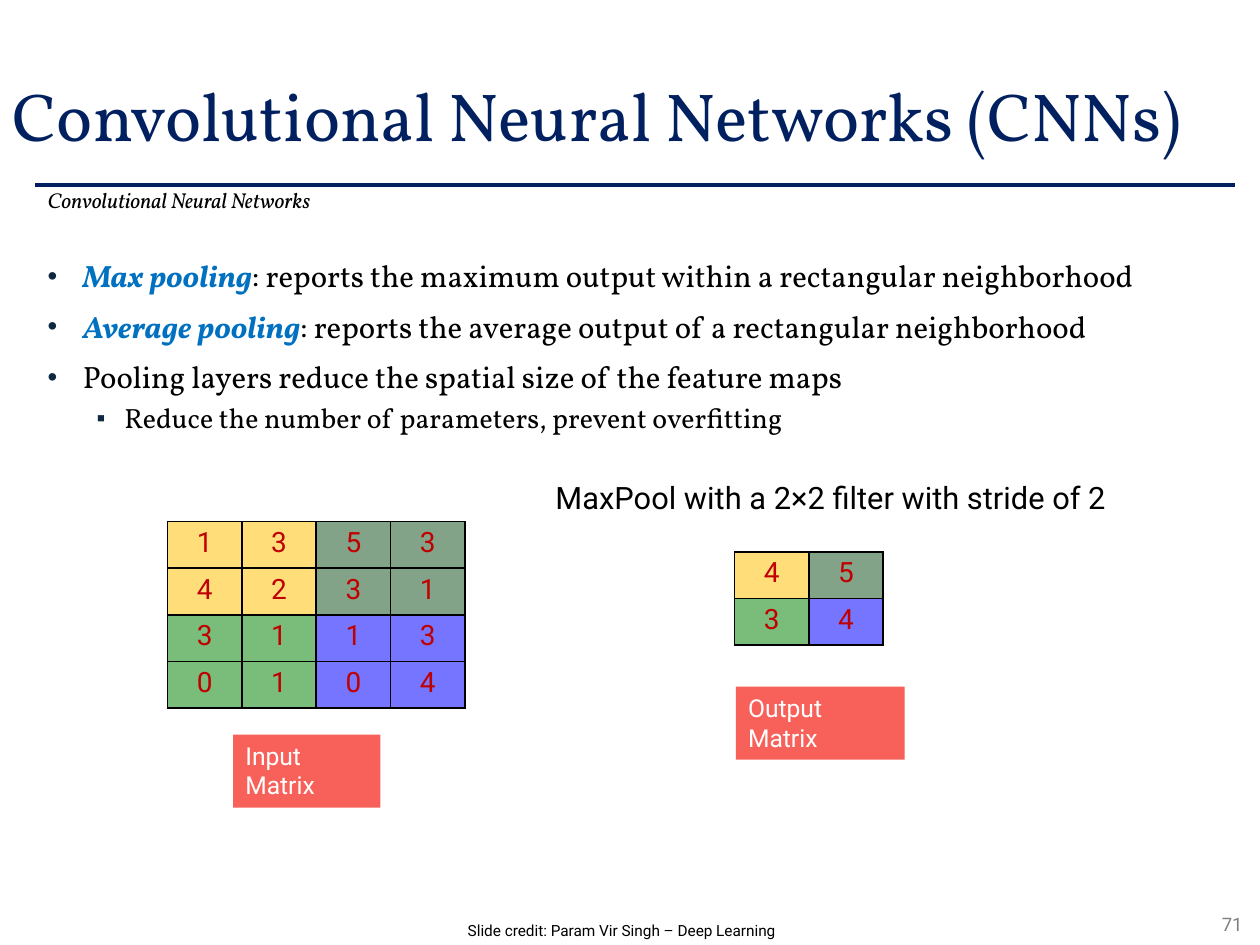
import pptx
import pptx.util
import pptx.dml.color
import pptx.enum.shapes
import pptx.enum.text
import pptx.oxml
import pptx.oxml.ns
from lxml import etree

Inches, Pt = pptx.util.Inches, pptx.util.Pt
RGB = pptx.dml.color.RGBColor.from_string
ALIGN = pptx.enum.text.PP_ALIGN
ANCHOR = pptx.enum.text.MSO_ANCHOR
qn = pptx.oxml.ns.qn

COLORS = {
    "navy": "002060", "black": "000000", "white": "FFFFFF", "gray": "808080",
    "blue": "0070C0", "bullet": "0E2841", "red": "C00000", "coral": "F7615A",
}
# Pooling regions: fill colour and opacity in percent
REGIONS = {"A": ("FFC000", 52), "B": ("13501B", 52), "C": ("008000", 52), "D": ("0000FF", 54)}


def add_run(p, text, size, font, color, bold=False, italic=False):
    r = p.add_run()
    r.text = text
    r.font.size, r.font.name = Pt(size), font
    r.font.bold, r.font.italic = bold, italic
    r.font.color.rgb = RGB(COLORS[color])


def add_matrix(left, top, values, regions):
    """Add a table of numbers whose cells are tinted by pooling region."""
    rows, cols = len(values), len(values[0])
    frame = s.shapes.add_table(rows, cols, Inches(left), Inches(top),
                               Inches(0.59 * cols), Inches(0.37 * rows))
    table = frame.table
    table.first_row = table.horz_banding = False
    for col in table.columns:
        col.width = Inches(0.59)
    for i, row in enumerate(table.rows):
        row.height = Inches(0.37)
        for j, cell in enumerate(row.cells):
            cell.margin_left = cell.margin_right = Inches(0.09)
            cell.margin_top = cell.margin_bottom = Inches(0.04)
            p = cell.text_frame.paragraphs[0]
            p.alignment = ALIGN.CENTER
            add_run(p, values[i][j], 16, "Roboto", "red")
            color, opacity = REGIONS[regions[i][j]]
            cell.fill.solid()
            cell.fill.fore_color.rgb = RGB(color)
            tcPr = cell._tc.get_or_add_tcPr()
            srgb = tcPr.find(".//" + qn("a:srgbClr"))
            etree.SubElement(srgb, qn("a:alpha"), val=str(opacity * 1000))
            for k, side in enumerate(("lnL", "lnR", "lnT", "lnB")):
                ln = etree.Element(qn("a:" + side), w=str(Pt(1)))
                fill = etree.SubElement(ln, qn("a:solidFill"))
                etree.SubElement(fill, qn("a:srgbClr"), val=COLORS["black"])
                tcPr.insert(k, ln)


prs = pptx.Presentation()
prs.slide_width, prs.slide_height = Inches(10), Inches(7.5)
s = prs.slides.add_slide(prs.slide_layouts[5])

# Title and rule
title = s.shapes.title
title.left, title.top, title.width, title.height = Inches(0), Inches(0.44), Inches(10), Inches(1.01)
tf = title.text_frame
tf.auto_size = pptx.enum.text.MSO_AUTO_SIZE.NONE
tf.vertical_anchor = ANCHOR.MIDDLE
p = tf.paragraphs[0]
p.alignment, p.line_spacing = ALIGN.LEFT, 0.9
add_run(p, "Convolutional Neural Networks (CNNs)", 38.8, "Vollkorn", "navy")

rule = s.shapes.add_connector(pptx.enum.shapes.MSO_CONNECTOR.STRAIGHT,
                              Inches(0.28), Inches(1.47), Inches(9.8), Inches(1.47))
rule.line.color.rgb = RGB(COLORS["navy"])
rule.line.width = Pt(2)
etree.SubElement(rule._element.spPr, qn("a:effectLst"))

# Single-line texts: left, top, width, height, text, size, font, colour, italic, alignment
LINES = [
    (0.28, 1.46, 6.16, 0.34, "Convolutional Neural Networks", 12.3, "Vollkorn", "black", True, ALIGN.LEFT),
    (4.31, 3.75, 4.77, 0.4, "MaxPool with a 2×2 filter with stride of 2", 17.6, "Roboto", "black", False, ALIGN.LEFT),
    (1.6, 7.26, 6.67, 0.25, "Slide credit: Param Vir Singh – Deep Learning", 8.8, "Roboto", "black", False, ALIGN.CENTER),
    (8.86, 7.2, 1.1, 0.28, "71", 10.6, "Roboto", "gray", False, ALIGN.RIGHT),
]
for left, top, width, height, text, size, font, color, italic, align in LINES:
    sp = s.shapes.add_textbox(Inches(left), Inches(top), Inches(width), Inches(height))
    tf = sp.text_frame
    tf.word_wrap = True
    p = tf.paragraphs[0]
    p.alignment = align
    if font == "Vollkorn":
        p.line_spacing = 0.9
    add_run(p, text, size, font, color, italic=italic)

# Bullets: level, highlighted term, rest of the text
BULLETS = [
    (0, "Max pooling", ": reports the maximum output within a rectangular neighborhood"),
    (0, "Average pooling", ": reports the average output of a rectangular neighborhood"),
    (0, "", "Pooling layers reduce the spatial size of the feature maps"),
    (1, "", "Reduce the number of parameters, prevent overfitting"),
]
# Per level: bullet, left margin, hanging indent, size, space before
LEVELS = [("•", 0.28, 0.28, 17.6, 10), ("▪", 0.61, 0.22, 15.9, 5)]
body = s.shapes.add_textbox(Inches(0.28), Inches(2.02), Inches(9.53), Inches(5.18))
tf = body.text_frame
tf.word_wrap = True
for i, (level, term, text) in enumerate(BULLETS):
    char, margin, hang, size, before = LEVELS[level]
    p = tf.add_paragraph() if i else tf.paragraphs[0]
    p.level, p.line_spacing = level, 0.9
    p.space_before = Pt(before if i else 0)
    pPr = p._p.get_or_add_pPr()
    pPr.set("marL", str(Inches(margin)))
    pPr.set("indent", str(-Inches(hang)))
    buClr = etree.SubElement(pPr, qn("a:buClr"))
    etree.SubElement(buClr, qn("a:srgbClr"), val=COLORS["bullet"])
    etree.SubElement(pPr, qn("a:buSzPct"), val="90000")
    etree.SubElement(pPr, qn("a:buFont"), typeface="Arial")
    etree.SubElement(pPr, qn("a:buChar"), char=char)
    if term:
        add_run(p, term, size, "Vollkorn", "blue", bold=True, italic=True)
    add_run(p, text, size, "Vollkorn", "black")

# Matrices and their labels
add_matrix(1.33, 4.14, ["1353", "4231", "3113", "0104"], ["AABB", "AABB", "CCDD", "CCDD"])
add_matrix(5.83, 4.38, ["45", "34"], ["AB", "CD"])
for left, top, width, text in [(1.85, 5.83, 1.17, "Input Matrix"), (5.84, 5.45, 1.34, "Output Matrix")]:
    sp = s.shapes.add_shape(pptx.enum.shapes.MSO_SHAPE.RECTANGLE,
                            Inches(left), Inches(top), Inches(width), Inches(0.58))
    sp.shadow.inherit = False
    sp.fill.solid()
    sp.fill.fore_color.rgb = RGB(COLORS["coral"])
    sp.line.fill.background()
    tf = sp.text_frame
    tf.word_wrap = True
    tf.vertical_anchor = ANCHOR.TOP
    p = tf.paragraphs[0]
    p.alignment = ALIGN.LEFT
    add_run(p, text, 14.1, "Roboto", "white")

prs.save("out.pptx")
